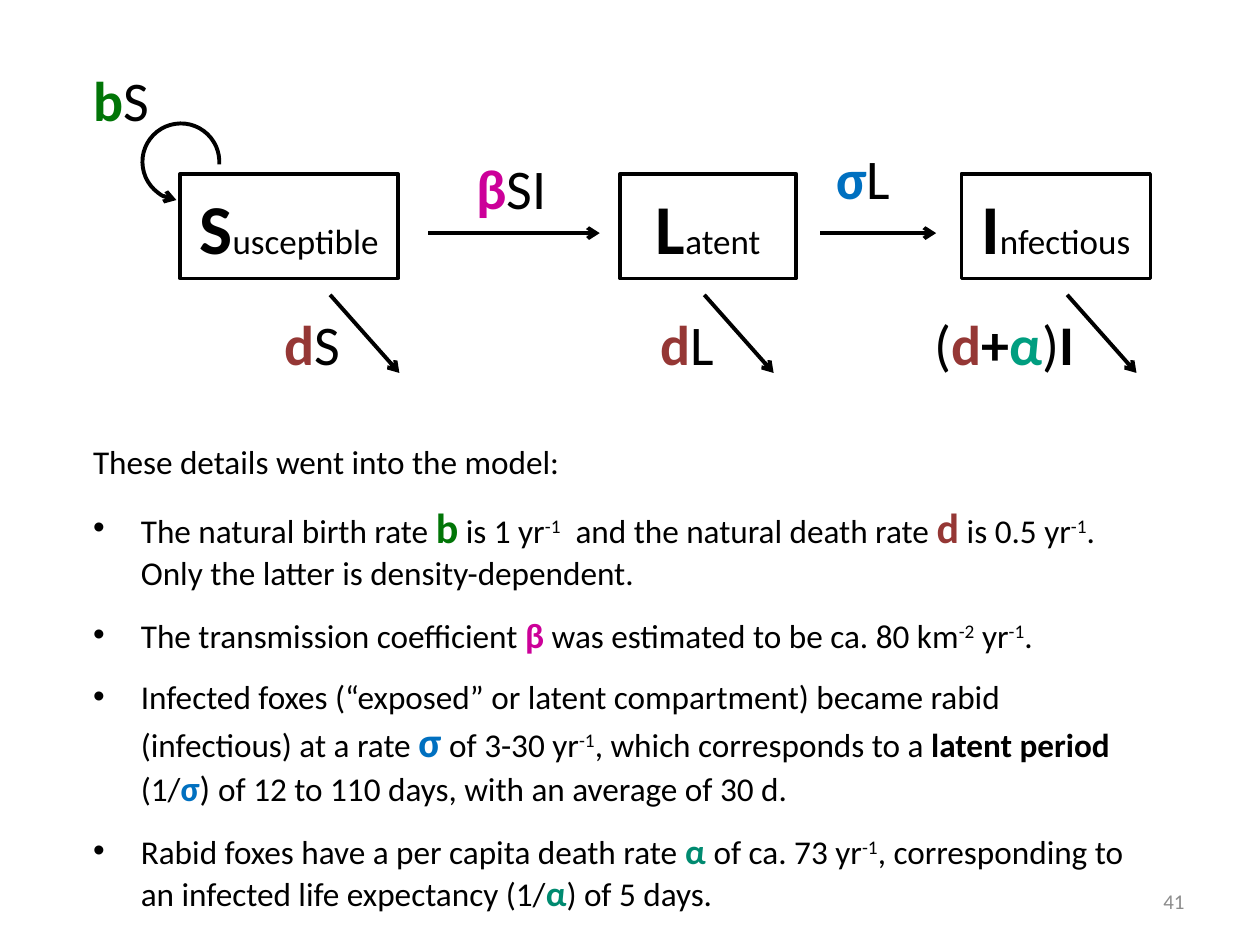
from lxml.etree import SubElement
from pptx import Presentation
from pptx.dml.color import RGBColor
from pptx.enum.shapes import MSO_CONNECTOR, MSO_SHAPE
from pptx.enum.text import MSO_ANCHOR, MSO_AUTO_SIZE, PP_ALIGN
from pptx.oxml.ns import qn
from pptx.util import Inches, Pt

THEME = {
    "font": "Calibri",
    "colours": {"ink": "000000", "paper": "FFFFFF", "birth": "017507", "death": "953735",
                "transmission": "CC0099", "onset": "0070C0", "disease": "009E80",
                "disease text": "008A70", "page": "8C8C8C"},
    "initial": 40, "box": 20, "rate": 32, "body": 19, "page": 12,
    "box line": 2, "arrow line": 2.25,
}

# A run is plain text, or (text, options): colour, size, bold, raised
def symbol(text, colour, size=None):
    return text, {"colour": colour, "size": size, "bold": True}


def power(text):
    return text, {"raised": True}


# Compartments: left, width, initial, rest of the name
BOX_TOP, BOX_HEIGHT = 1.38, 0.83
COMPARTMENTS = [
    (1.43, 1.73, "S", "usceptible"),
    (4.92, 1.40, "L", "atent"),
    (7.63, 1.50, "I", "nfectious"),
]
# Flows between compartments (start, end) and deaths out of them (start)
FLOWS = [(3.40, 4.76), (6.51, 7.43)]
DEATHS = [2.62, 5.59, 8.47]
DEATH_TOP, DEATH_RUN, DEATH_DROP = 2.34, 0.55, 0.62

# Rate labels: left, top, width, runs
RATES = [
    (0.64, 0.47, 0.65, [symbol("b", "birth"), "S"]),
    (3.68, 1.17, 0.77, [symbol("β", "transmission"), "SI"]),
    (6.54, 1.09, 0.64, [symbol("σ", "onset"), "L"]),
    (2.16, 2.41, 0.65, [symbol("d", "death"), "S"]),
    (5.14, 2.41, 0.65, [symbol("d", "death"), "L"]),
    (7.32, 2.41, 1.33, ["(", symbol("d", "death"), symbol("+", "ink"),
                        symbol("α", "disease"), ")", symbol("I", "ink")]),
]

INTRO = ["These details went into the model:"]
DETAILS = [
    ["The natural birth rate ", symbol("b", "birth", 24), " is 1 yr", power("-1"),
     "  and the natural death rate ", symbol("d", "death", 24), " is 0.5 yr", power("-1"),
     ". Only the latter is density-dependent."],
    ["The transmission coefficient ", symbol("β", "transmission", 20),
     " was estimated to be ca. 80 km", power("-2"), " yr", power("-1"), "."],
    ["Infected foxes (“exposed” or latent compartment) became rabid (infectious) at a rate ",
     symbol("σ", "onset", 24), symbol(" ", "onset", 20), "of 3-30 yr", power("-1"),
     ", which corresponds to a ", symbol("latent period ", "ink"), "(1/",
     symbol("σ", "onset", 20), (") ", {"size": 20}),
     "of 12 to 110 days, with an average of 30 d."],
    ["Rabid foxes have a per capita death rate ", symbol("α ", "disease text", 20),
     "of ca. 73 yr", power("-1"), ", corresponding to an infected life expectancy (1/",
     symbol("α", "disease text", 20), ") of 5 days."],
]
PAGE = "41"


def colour(name):
    return RGBColor.from_string(THEME["colours"][name])


def write(paragraph, runs, size, ink="ink"):
    paragraph.font.name = THEME["font"]
    paragraph.font.size = Pt(size)
    for item in runs:
        text, options = (item, {}) if isinstance(item, str) else item
        run = paragraph.add_run()
        run.text = text
        run.font.color.rgb = colour(options.get("colour", ink))
        run.font.bold = options.get("bold", False)
        if options.get("size"):
            run.font.size = Pt(options["size"])
        if options.get("raised"):
            run.font._element.set("baseline", "30000")


def add_text(slide, left, top, width, height, wrap=True):
    frame = slide.shapes.add_textbox(
        Inches(left), Inches(top), Inches(width), Inches(height)).text_frame
    frame.word_wrap = wrap
    return frame


def style_arrow(arrow):
    arrow.line.color.rgb = colour("ink")
    arrow.line.width = Pt(THEME["arrow line"])
    SubElement(arrow.line._get_or_add_ln(), qn("a:tailEnd"), type="arrow")


def add_arrow(slide, x1, y1, x2, y2):
    arrow = slide.shapes.add_connector(
        MSO_CONNECTOR.STRAIGHT, Inches(x1), Inches(y1), Inches(x2), Inches(y2))
    style_arrow(arrow)
    SubElement(arrow._element.spPr, qn("a:effectLst"))


def add_compartment(slide, left, width, initial, rest):
    box = slide.shapes.add_shape(MSO_SHAPE.RECTANGLE, Inches(left), Inches(BOX_TOP),
                                 Inches(width), Inches(BOX_HEIGHT))
    box.shadow.inherit = False
    box.fill.solid()
    box.fill.fore_color.rgb = colour("paper")
    box.line.color.rgb = colour("ink")
    box.line.width = Pt(THEME["box line"])
    box.text_frame.vertical_anchor = MSO_ANCHOR.MIDDLE
    name = box.text_frame.paragraphs[0]
    name.alignment = PP_ALIGN.CENTER
    write(name, [symbol(initial, "ink", THEME["initial"]), rest], THEME["box"])


def add_birth_loop(slide):
    loop = slide.shapes.add_shape(
        MSO_SHAPE.ARC, Inches(1.13), Inches(0.98), Inches(0.61), Inches(0.61))
    loop.shadow.inherit = False
    loop.fill.background()
    loop.adjustments[0] = 55.81
    loop.adjustments[1] = 0
    loop.rotation = 276.7
    loop._element.spPr.xfrm.set("flipH", "1")
    style_arrow(loop)


def add_bullet(paragraph):
    properties = paragraph._p.get_or_add_pPr()
    properties.set("marL", str(Inches(0.38)))
    properties.set("indent", str(-Inches(0.38)))
    SubElement(properties, qn("a:buFont"), typeface="Arial")
    SubElement(properties, qn("a:buChar"), char="•")


def main():
    deck = Presentation()
    deck.slide_width, deck.slide_height = Inches(10), Inches(7.5)
    slide = deck.slides.add_slide(deck.slide_layouts[6])

    # Compartment diagram
    for compartment in COMPARTMENTS:
        add_compartment(slide, *compartment)
    flow_y = 1.85
    for start, end in FLOWS:
        add_arrow(slide, start, flow_y, end, flow_y)
    for start in DEATHS:
        add_arrow(slide, start, DEATH_TOP, start + DEATH_RUN, DEATH_TOP + DEATH_DROP)
    add_birth_loop(slide)
    for left, top, width, runs in RATES:
        label = add_text(slide, left, top, width, 0.64, wrap=False)
        label.auto_size = MSO_AUTO_SIZE.SHAPE_TO_FIT_TEXT
        write(label.paragraphs[0], runs, THEME["rate"])

    # Model details
    body = add_text(slide, 0.64, 3.45, 8.53, 3.95)
    body.auto_size = MSO_AUTO_SIZE.SHAPE_TO_FIT_TEXT
    intro = body.paragraphs[0]
    intro.space_after = Pt(12)
    write(intro, INTRO, THEME["body"])
    for runs in DETAILS:
        detail = body.add_paragraph()
        detail.space_after = Pt(12)
        add_bullet(detail)
        write(detail, runs, THEME["body"])

    # Page number
    footer = add_text(slide, 7.17, 6.95, 2.33, 0.4)
    footer.vertical_anchor = MSO_ANCHOR.MIDDLE
    footer.paragraphs[0].alignment = PP_ALIGN.RIGHT
    write(footer.paragraphs[0], [PAGE], THEME["page"], "page")

    deck.save("out.pptx")


if __name__ == "__main__":
    main()
